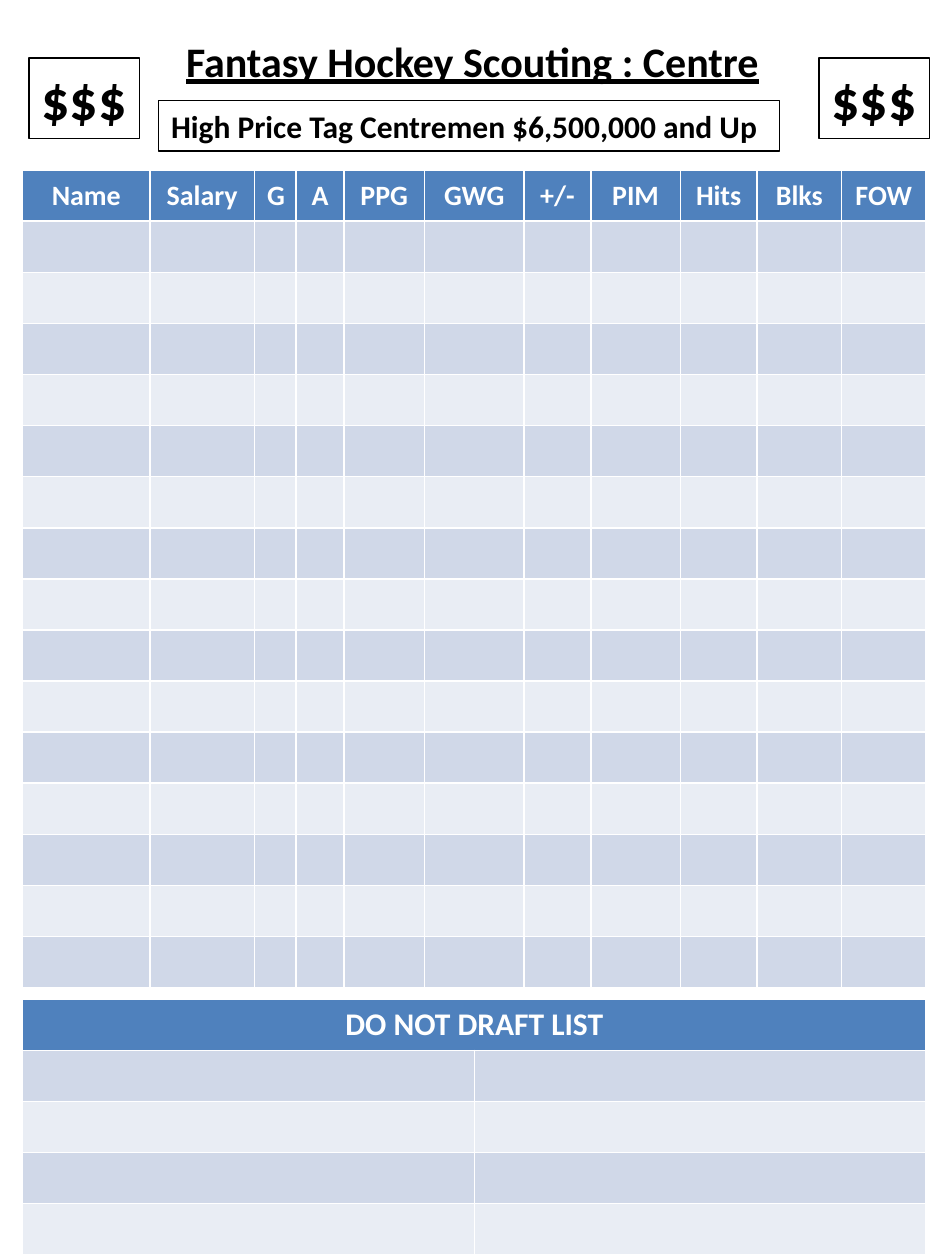
from pptx import Presentation
from pptx.dml.color import RGBColor
from pptx.enum.text import MSO_ANCHOR, PP_ALIGN
from pptx.util import Inches, Pt

MID = MSO_ANCHOR.MIDDLE
TOP = MSO_ANCHOR.TOP
CENTRE = PP_ALIGN.CENTER
LEFT = PP_ALIGN.LEFT

COLS, ROWS = 75, 100
BLACK, WHITE, HEAD = "000000", "FFFFFF", "4F81BD"
BANDS = ("D0D8E8", "E9EDF4")


def tint(code):
    return RGBColor.from_string(code)


class Sheet:
    font = "Calibri"

    def __init__(self, deck):
        self.wide, self.high = deck.slide_width, deck.slide_height
        self.slide = deck.slides.add_slide(deck.slide_layouts[0])

    def place(self, left, top, width, height):
        return (round(left * self.wide / COLS), round(top * self.high / ROWS),
                round(width * self.wide / COLS), round(height * self.high / ROWS))

    def label(self, frame, text, size, ink=BLACK, align=LEFT, line=None):
        para = frame.paragraphs[0]
        para.alignment = align
        run = para.add_run()
        run.text = text
        font = run.font
        font.name, font.size, font.bold = self.font, Pt(size), True
        font.underline = line
        font.color.rgb = tint(ink)

    def title(self, text, area):
        shape = self.slide.shapes.title
        shape.left, shape.top, shape.width, shape.height = self.place(*area)
        frame = shape.text_frame
        frame.vertical_anchor = MID
        self.label(frame, text, 24, align=CENTRE, line=True)
        body = self.slide.placeholders[1].element
        body.getparent().remove(body)

    def box(self, text, size, area):
        shape = self.slide.shapes.add_textbox(*self.place(*area))
        shape.line.color.rgb = tint(BLACK)
        shape.line.width = Pt(0.75)
        shape.text_frame.word_wrap = True
        self.label(shape.text_frame, text, size)

    def table(self, heads, size, anchor, area, count, parts):
        grid = self.slide.shapes.add_table(
            count, len(parts), *self.place(*area)).table
        for col, part in zip(grid.columns, parts):
            col.width = round(part / sum(parts) * area[2] * self.wide / COLS)
        for row in range(count):
            for col in range(len(parts)):
                fill = grid.cell(row, col).fill
                fill.solid()
                fill.fore_color.rgb = tint(BANDS[(row - 1) % 2] if row else HEAD)
        if len(heads) < len(parts):
            grid.cell(0, 0).merge(grid.cell(0, len(parts) - 1))
        for col, text in enumerate(heads):
            cell = grid.cell(0, col)
            cell.vertical_anchor = anchor
            self.label(cell.text_frame, text, size, WHITE, CENTRE)


def main():
    deck = Presentation()
    deck.slide_width, deck.slide_height = Inches(7.5), Inches(10)
    sheet = Sheet(deck)
    sheet.title("Fantasy Hockey Scouting : Centre", (5.6, 1.8, 63.8, 6))
    stats = {"Name": 1.01, "Salary": 0.83, "G": 0.33, "A": 0.38,
             "PPG": 0.64, "GWG": 0.79, "+/-": 0.53, "PIM": 0.71,
             "Hits": 0.61, "Blks": 0.67, "FOW": 0.67}
    sheet.table(list(stats), 16, MID, (1.8, 13.5, 71.7, 64.9),
                16, list(stats.values()))
    sheet.box("High Price Tag Centremen $6,500,000 and Up", 18,
              (12.6, 8, 49.3, 4))
    sheet.table(["DO NOT DRAFT LIST"], 18, TOP, (1.8, 79.3, 71.7, 20.3),
                5, [1, 1])
    for left in (65, 2.3):
        sheet.box("$$$", 32, (left, 4.6, 8.8, 6.4))
    deck.save("out.pptx")


if __name__ == "__main__":
    main()
